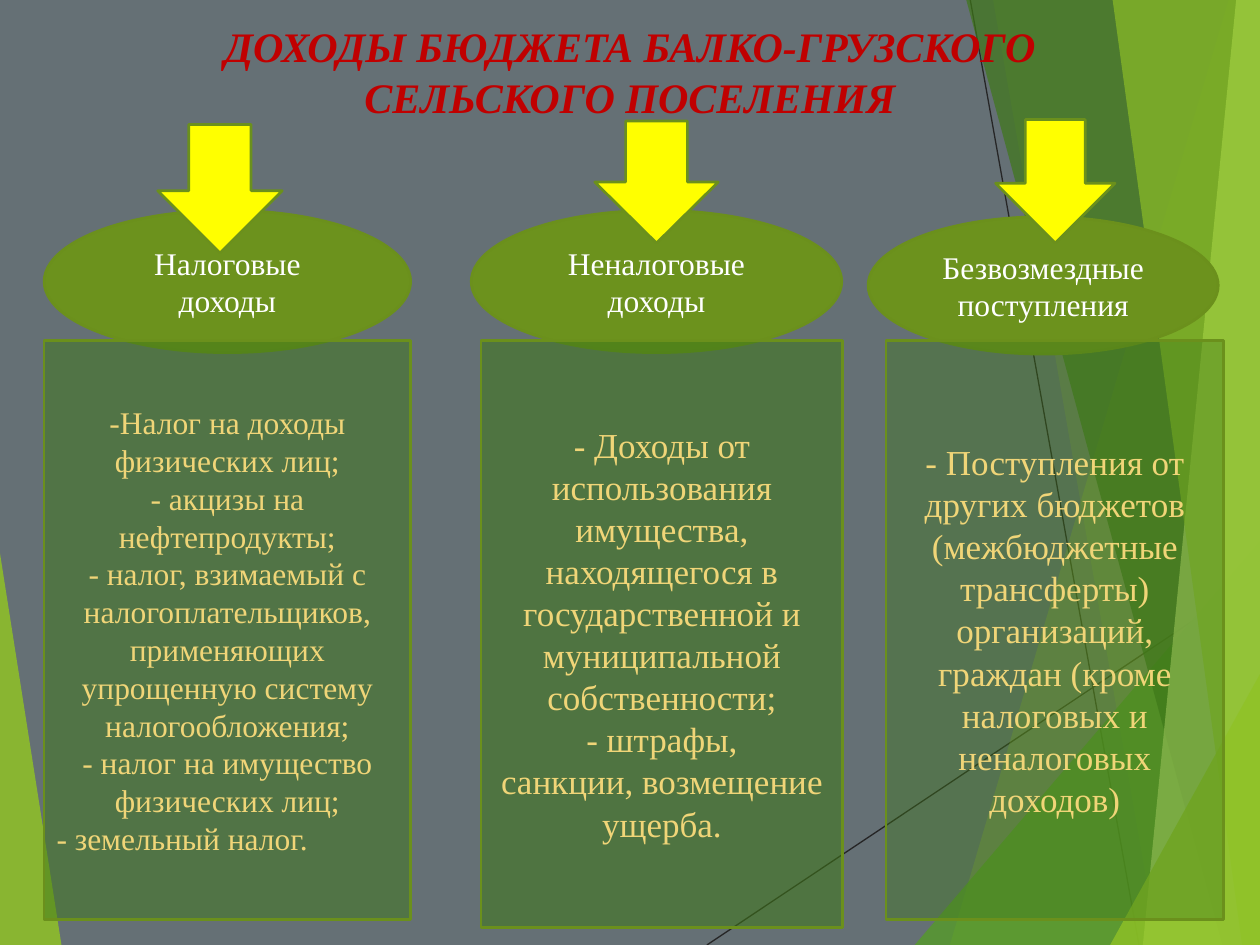
from dataclasses import dataclass
from lxml import etree
from pptx import Presentation
from pptx import util as u
from pptx.dml import color
from pptx.enum import shapes, text
from pptx.oxml import ns


@dataclass(frozen=True)
class Theme:
    font: str = "Times New Roman"
    back: str = "657075"
    title: str = "C00000"
    oval: str = "6C921D"
    edge: str = "6B901C"
    arrow: str = "FFFF00"
    card: str = "3F7819"
    label: str = "FFFFFF"
    body: str = "F0D578"
    rule: str = "262626"
    lime: str = "90C226"
    leaf: str = "54A021"
    pale: str = "C0E474"
    head: int = 24
    small: int = 18
    large: int = 20


T = Theme()
W, H = 25.4, 19.05
KIND = shapes.MSO_SHAPE
LEFT, MID = text.PP_ALIGN.LEFT, text.PP_ALIGN.CENTER

RULES = [(14.25, H, W, 11.61), (19.56, 0, 22.96, H)]
FACETS = [
    (T.lime, 85, [(0, 11.15), (1.24, H), (0, H)]),
    (T.lime, 30, [(24.77, 0), (19.15, H), (W, H), (W, 0)]),
    (T.lime, 20, [(20.02, 0), (23.34, H), (W, H), (W, 0)]),
    (T.leaf, 72, [(18.44, H), (W, 10.9), (W, H)]),
    (T.card, 70, [(19.48, 0), (24.64, H), (W, H), (W, 0)]),
    (T.pale, 70, [(24.92, 0), (23.04, H), (W, H), (W, 0)]),
    (T.lime, 65, [(22.43, 0), (25.04, H), (W, H), (W, 0)]),
    (T.lime, 80, [(22.38, H), (W, 13.59), (W, H)]),
]

COLUMNS = [
    {
        "label": "Налоговые доходы",
        "oval": (0.89, 4.24, 7.39, 2.87),
        "card": (0.89, 6.86, 7.39, 11.68),
        "arrow": (3.18, 2.51, 2.51, 2.59),
        "alpha": 51,
        "size": T.small,
        "body": [
            ("-Налог на доходы физических лиц;", MID),
            ("- акцизы на нефтепродукты;", MID),
            ("- налог, взимаемый с налогоплательщиков, применяющих "
             "упрощенную систему налогообложения;", MID),
            ("- налог на имущество физических лиц;", MID),
            ("- земельный налог.", LEFT),
        ],
    },
    {
        "label": "Неналоговые доходы",
        "oval": (9.5, 4.24, 7.47, 2.87),
        "card": (9.7, 6.86, 7.29, 11.84),
        "arrow": (11.99, 2.44, 2.49, 2.46),
        "alpha": 56,
        "size": T.large,
        "body": [
            ("- Доходы от использования имущества, находящегося в "
             "государственной и муниципальной собственности;", MID),
            ("- штрафы,\vсанкции, возмещение ущерба.", MID),
        ],
    },
    {
        "label": "Безвозмездные поступления",
        "oval": (17.5, 4.37, 7.06, 2.77),
        "card": (17.86, 6.86, 6.81, 11.68),
        "arrow": (20.07, 2.41, 2.41, 2.49),
        "alpha": 40,
        "size": T.large,
        "body": [
            ("- Поступления от других бюджетов (межбюджетные трансферты) "
             "организаций, граждан (кроме налоговых и неналоговых доходов)", MID),
        ],
    },
]


def rgb(code):
    return color.RGBColor.from_string(code)


def paint(shape, code, alpha=100):
    shape.shadow.inherit = False
    shape.fill.solid()
    shape.fill.fore_color.rgb = rgb(code)
    if alpha < 100:
        tint = shape._element.spPr.find(".//" + ns.qn("a:srgbClr"))
        etree.SubElement(tint, ns.qn("a:alpha"), val=str(alpha * 1000))


def write(shape, lines, code, size, **more):
    frame = shape.text_frame
    frame.word_wrap = True
    frame.vertical_anchor = text.MSO_ANCHOR.MIDDLE
    look = {"name": T.font, "size": u.Pt(size), **more}
    for i, (line, align) in enumerate(lines):
        para = frame.add_paragraph() if i else frame.paragraphs[0]
        para.text = line
        para.alignment = align
        for run in para.runs:
            for key, val in look.items():
                setattr(run.font, key, val)
            run.font.color.rgb = rgb(code)


def add_rule(slide, ends):
    line = slide.shapes.add_connector(
        shapes.MSO_CONNECTOR.STRAIGHT, *map(u.Cm, ends))
    line.line.color.rgb = rgb(T.rule)
    line.line.width = u.Pt(0.75)
    etree.SubElement(line._element.spPr, ns.qn("a:effectLst"))


def add_facet(slide, code, alpha, points):
    first, *rest = [(u.Cm(x), u.Cm(y)) for x, y in points]
    pen = slide.shapes.build_freeform(*first)
    pen.add_line_segments(rest)
    facet = pen.convert_to_shape()
    paint(facet, code, alpha)
    facet.line.fill.background()


def add_form(slide, kind, box, code, alpha=100):
    form = slide.shapes.add_shape(kind, *map(u.Cm, box))
    paint(form, code, alpha)
    form.line.color.rgb = rgb(T.edge)
    form.line.width = u.Pt(1.5)
    return form


def add_title(slide):
    title = slide.shapes.title
    slide.shapes._spTree.append(title._element)
    place = {"left": 1.7, "top": 0.33, "width": 22, "height": 2.21}
    for key, val in place.items():
        setattr(title, key, u.Cm(val))
    words = "ДОХОДЫ БЮДЖЕТА БАЛКО-ГРУЗСКОГО СЕЛЬСКОГО ПОСЕЛЕНИЯ"
    write(title, [(words, MID)], T.title, T.head, bold=True, italic=True)


def add_column(slide, col):
    oval = add_form(slide, KIND.OVAL, col["oval"], T.oval)
    write(oval, [(col["label"], MID)], T.label, T.small)
    card = add_form(slide, KIND.RECTANGLE, col["card"], T.card, col["alpha"])
    write(card, col["body"], T.body, col["size"])
    add_form(slide, KIND.DOWN_ARROW, col["arrow"], T.arrow)


def main():
    deck = Presentation()
    deck.slide_width, deck.slide_height = u.Cm(W), u.Cm(H)
    slide = deck.slides.add_slide(deck.slide_layouts[5])
    slide.background.fill.solid()
    slide.background.fill.fore_color.rgb = rgb(T.back)
    for ends in RULES:
        add_rule(slide, ends)
    for facet in FACETS:
        add_facet(slide, *facet)
    add_title(slide)
    for col in COLUMNS:
        add_column(slide, col)
    deck.save("out.pptx")


if __name__ == "__main__":
    main()
